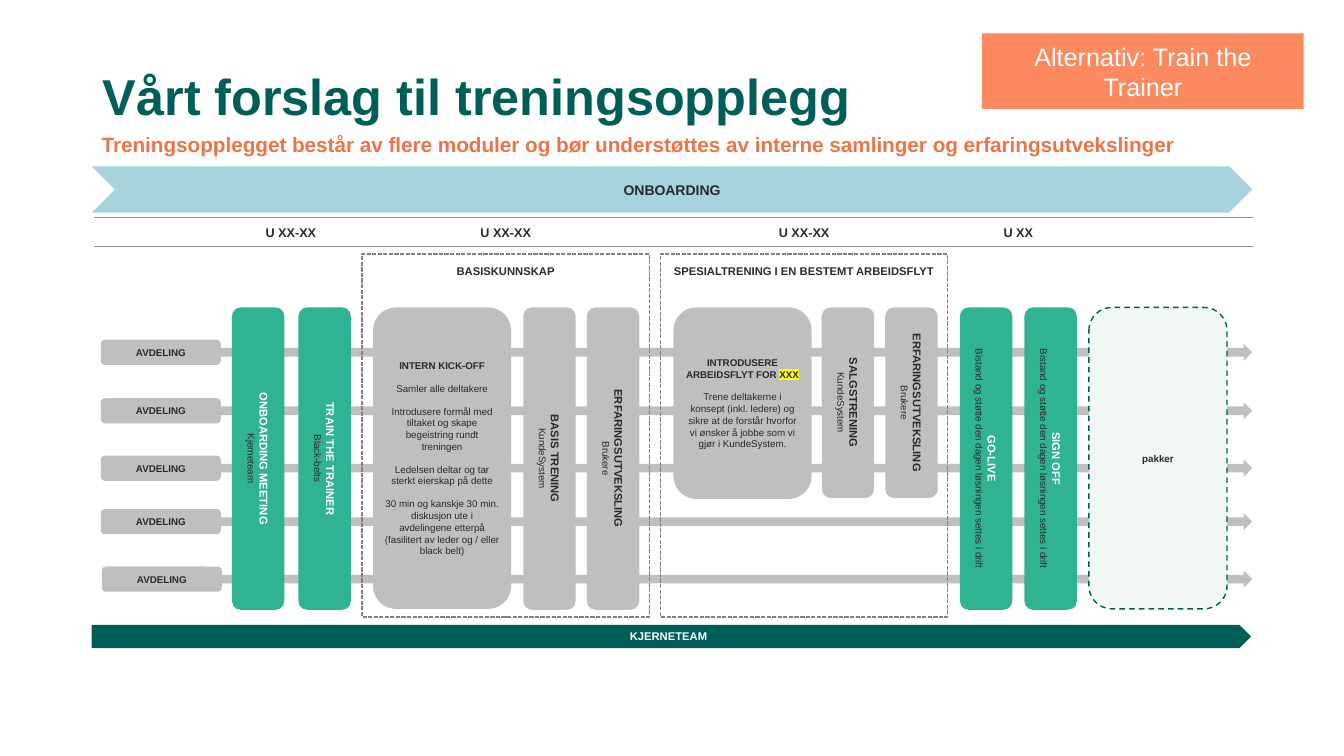
from lxml.etree import SubElement
from pptx import Presentation
from pptx.dml.color import RGBColor
from pptx.enum.dml import MSO_LINE
from pptx.enum.shapes import MSO_CONNECTOR, MSO_SHAPE
from pptx.enum.text import MSO_ANCHOR, MSO_AUTO_SIZE, PP_ALIGN
from pptx.oxml.ns import qn
from pptx.util import Inches, Pt

# Colours
INK, WHITE, GREY, GREEN, DARK_GREEN = "2B2929", "FFFFFF", "BFBFBF", "30B393", "005E58"
ORANGE, YELLOW = "EF7445", "FFFF00"

# Content
TITLE = "Vårt forslag til treningsopplegg"
SUBTITLE = ("Treningsopplegget består av flere moduler og bør understøttes av "
            "interne samlinger og erfaringsutvekslinger")
ALTERNATIVE = "Alternativ: Train the Trainer"
DEPARTMENT = "AVDELING"
LANES = [(1, 3.37), (1, 3.95), (1, 4.52), (1, 5.05), (1.01, 5.62)]  # left, top
WEEKS = [("U XX-XX", 2.3, 1.17), ("U XX-XX", 3.59, 2.85),
         ("U XX-XX", 6.55, 2.85), ("U XX", 9.52, 1.16)]  # text, left, width
PHASES = [("BASISKUNNSKAP", 3.59), ("SPESIALTRENING I EN BESTEMT ARBEIDSFLYT", 6.55)]
SUPPORT = "Bistand og støtte den dagen løsningen settes i drift"
MODULES = [  # heading, detail, left, height, fill, heading colour
    ("ONBOARDING MEETING", "Kjerneteam", 2.3, 3, GREEN, WHITE),
    ("TRAIN THE TRAINER", "Black-belts", 2.96, 3, GREEN, WHITE),
    ("BASIS TRENING", "KundeSystem", 5.19, 3, GREY, INK),
    ("ERFARINGSUTVEKSLING", "Brukere", 5.82, 3, GREY, INK),
    ("SALGSTRENING", "KundeSystem", 8.15, 1.89, GREY, INK),
    ("ERFARINGSUTVEKSLING", "Brukere", 8.78, 1.89, GREY, INK),
    ("GO-LIVE", SUPPORT, 9.52, 3, GREEN, WHITE),
    ("SIGN OFF", SUPPORT, 10.16, 3, GREEN, WHITE),
]
SESSIONS = [  # heading, highlighted word, paragraphs, left, height
    ("INTERN KICK-OFF", "", [
        "Samler alle deltakere",
        "Introdusere formål med tiltaket og skape begeistring rundt treningen",
        "Ledelsen deltar og tar sterkt eierskap på dette",
        "30 min og kanskje 30 min. diskusjon ute i avdelingene etterpå\n"
        "(fasilitert av leder og / eller black belt)"], 3.7, 2.99),
    ("INTRODUSERE ARBEIDSFLYT FOR ", "XXX", [
        "Trene deltakerne i konsept (inkl. ledere) og sikre at de forstår hvorfor "
        "vi ønsker å jobbe som vi gjør i KundeSystem."], 6.68, 1.9),
]
PACKAGES = "pakker"
MODULE_TOP, MODULE_WIDTH, SESSION_WIDTH, LANE_END = 3.05, 0.52, 1.37, 12.42

prs = Presentation()
prs.slide_width, prs.slide_height = Inches(13.33), Inches(7.5)
slide = prs.slides.add_slide(prs.slide_layouts[5])


def rgb(value):
    return RGBColor.from_string(value)


def write(paragraph, text, size, color=INK, bold=True, highlight=None):
    for i, line in enumerate(text.split("\n")):
        if i:
            paragraph.add_line_break()
        run = paragraph.add_run()
        run.text = line
        font = run.font
        font.size, font.bold, font.name = Pt(size), bold, "Arial"
        font.color.rgb = rgb(color)
        if highlight:
            props = run._r.get_or_add_rPr()
            mark = SubElement(props, qn("a:highlight"))
            SubElement(mark, qn("a:srgbClr")).set("val", highlight)
            props.find(qn("a:solidFill")).addnext(mark)


def next_paragraph(frame, before=0):
    paragraph = frame.add_paragraph()
    paragraph.alignment = PP_ALIGN.CENTER
    paragraph.space_before = Pt(before)
    return paragraph


def add_block(kind, left, top, width, height, fill=None, line=None, dash=None):
    block = slide.shapes.add_shape(kind, Inches(left), Inches(top), Inches(width), Inches(height))
    block.shadow.inherit = False
    if fill:
        block.fill.solid()
        block.fill.fore_color.rgb = rgb(fill)
    else:
        block.fill.background()
    if line:
        block.line.color.rgb = rgb(line)
        block.line.width = Pt(1)
        block.line.dash_style = dash
    else:
        block.line.fill.background()
    frame = block.text_frame
    frame.word_wrap = True
    frame.vertical_anchor = MSO_ANCHOR.MIDDLE
    frame.paragraphs[0].alignment = PP_ALIGN.CENTER
    return block


def set_margins(frame, sides, ends):
    frame.margin_left = frame.margin_right = Inches(sides)
    frame.margin_top = frame.margin_bottom = Inches(ends)


def add_label(text, left, top, width, height, size, color=INK, align=PP_ALIGN.CENTER):
    box = slide.shapes.add_textbox(Inches(left), Inches(top), Inches(width), Inches(height))
    frame = box.text_frame
    frame.word_wrap = True
    frame.paragraphs[0].alignment = align
    write(frame.paragraphs[0], text, size, color)
    return frame


# Title and subtitle
title = slide.shapes.title
title.left, title.top, title.width, title.height = map(Inches, (0.92, 0.66, 11.5, 0.93))
heading = title.text_frame
heading.word_wrap, heading.auto_size = True, MSO_AUTO_SIZE.NONE
heading.vertical_anchor = MSO_ANCHOR.TOP
heading.paragraphs[0].alignment = PP_ALIGN.LEFT
heading.paragraphs[0].line_spacing = 0.9
write(heading.paragraphs[0], TITLE, 36, DARK_GREEN)
subtitle = add_label(SUBTITLE, 0.91, 1.27, 11.5, 0.35, 14.8, ORANGE, PP_ALIGN.LEFT)
subtitle.vertical_anchor = MSO_ANCHOR.MIDDLE
subtitle.paragraphs[0].line_spacing = 0.9

# Department lanes
for left, top in LANES:
    arrow_left = left + 0.99
    add_block(MSO_SHAPE.RIGHT_ARROW, arrow_left, top + 0.04, LANE_END - arrow_left, 0.17, GREY)
    department = add_block(MSO_SHAPE.ROUNDED_RECTANGLE, left, top, 1.19, 0.25, GREY)
    write(department.text_frame.paragraphs[0], DEPARTMENT, 7)

# Onboarding band, core team band and alternative tag
for kind, text, box, fill, size, color, bold in [
    (MSO_SHAPE.CHEVRON, "ONBOARDING", (0.91, 1.65, 11.51, 0.46), "A6D3DD", 10, INK, True),
    (MSO_SHAPE.PENTAGON, "KJERNETEAM", (0.91, 6.2, 11.5, 0.23), DARK_GREEN, 8, WHITE, True),
    (MSO_SHAPE.RECTANGLE, ALTERNATIVE, (9.74, 0.33, 3.19, 0.75), "FC8A5E", 18, WHITE, False),
]:
    band = add_block(kind, *box, fill)
    write(band.text_frame.paragraphs[0], text, size, color, bold)

# Week row between two rules
for y in (2.16, 2.44):
    rule = slide.shapes.add_connector(
        MSO_CONNECTOR.STRAIGHT, Inches(12.43), Inches(y), Inches(0.93), Inches(y))
    rule.line.color.rgb = rgb("979292")
    rule.line.width = Pt(0.5)
    SubElement(rule._element.spPr, qn("a:effectLst"))
for week, left, width in WEEKS:
    add_label(week, left, 2.18, width, 0.25, 9)

# Phase frames
for phase, left in PHASES:
    add_block(MSO_SHAPE.RECTANGLE, left, 2.52, 2.85, 3.6, line="808080", dash=MSO_LINE.SQUARE_DOT)
    add_label(phase, left, 2.57, 2.85, 0.24, 8)

# Module bars, turned a quarter around their centre
for name, detail, left, height, fill, color in MODULES:
    turn = (height - MODULE_WIDTH) / 2
    module = add_block(MSO_SHAPE.ROUNDED_RECTANGLE, left - turn, MODULE_TOP + turn,
                       height, MODULE_WIDTH, fill)
    module.rotation = 90
    set_margins(module.text_frame, 0.12, 0.12)
    write(module.text_frame.paragraphs[0], name, 8, color)
    write(next_paragraph(module.text_frame), detail, 7, bold=False)

# Session cards
for name, marked, details, left, height in SESSIONS:
    session = add_block(MSO_SHAPE.ROUNDED_RECTANGLE, left, MODULE_TOP, SESSION_WIDTH, height, GREY)
    set_margins(session.text_frame, 0.05, 0.1)
    write(session.text_frame.paragraphs[0], name, 7)
    if marked:
        write(session.text_frame.paragraphs[0], marked, 7, highlight=YELLOW)
    for detail in details:
        write(next_paragraph(session.text_frame, 8), detail, 7, bold=False)

# Packages card
packages = add_block(MSO_SHAPE.ROUNDED_RECTANGLE, 10.8, MODULE_TOP, SESSION_WIDTH, 2.99,
                     "F1F7F5", DARK_GREEN, MSO_LINE.DASH)
write(packages.text_frame.paragraphs[0], PACKAGES, 7)

prs.save("out.pptx")
